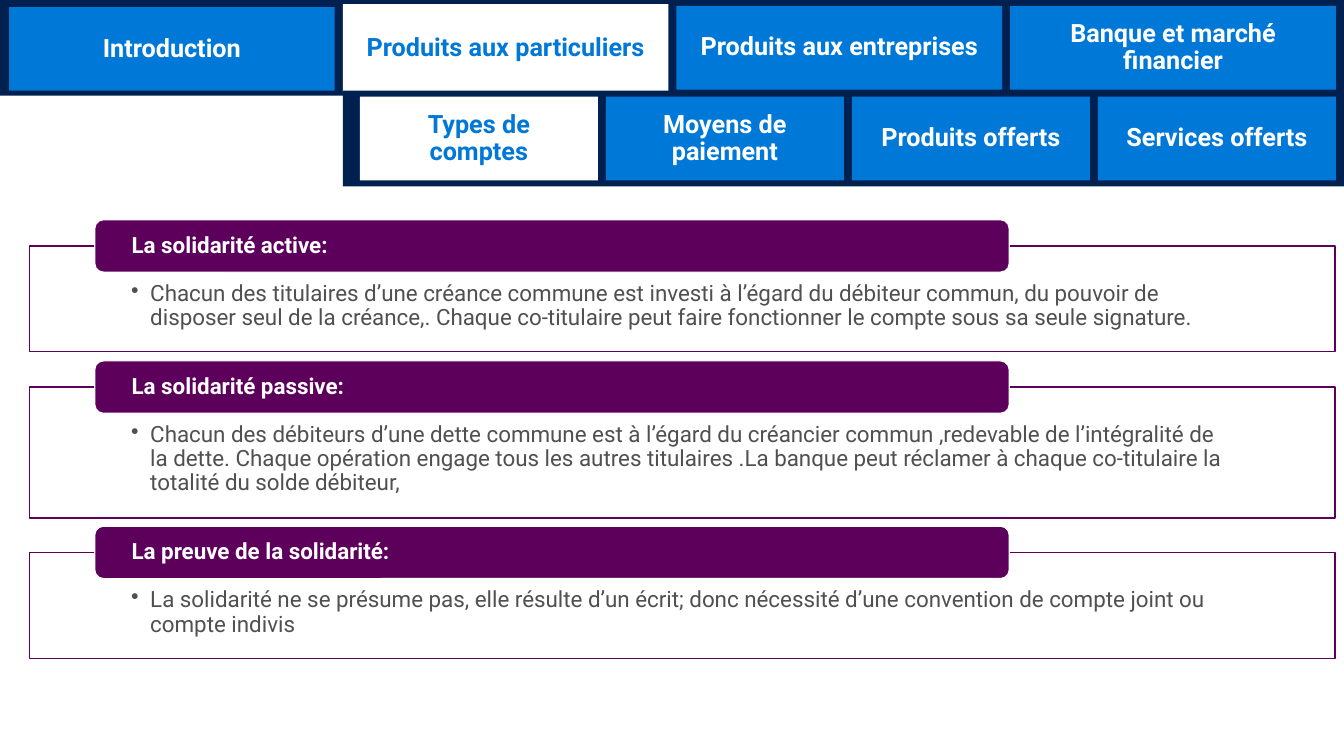
from lxml import etree
from pptx import Presentation
from pptx.dml.color import RGBColor
from pptx.enum.shapes import MSO_SHAPE
from pptx.enum.text import MSO_ANCHOR, PP_ALIGN
from pptx.oxml.ns import qn
from pptx.util import Inches, Pt

RECT, ROUNDED = MSO_SHAPE.RECTANGLE, MSO_SHAPE.ROUNDED_RECTANGLE
TOP, MIDDLE = MSO_ANCHOR.TOP, MSO_ANCHOR.MIDDLE
LEFT, CENTER = PP_ALIGN.LEFT, PP_ALIGN.CENTER

NAVY, BLUE, WHITE, PURPLE, GREY = "002050", "0078D7", "FFFFFF", "5C005C", "505050"
TAB_GAP = 0.08

# Label, top, height; the active tab is white
MAIN_TABS = [
    ("Introduction", 0.07, 0.83),
    ("Produits aux particuliers", 0.04, 0.87),
    ("Produits aux entreprises", 0.06, 0.83),
    ("Banque et marché financier", 0.06, 0.83),
]
SUB_TABS = [(label, 0.96, 0.83) for label in (
    "Types de comptes", "Moyens de paiement", "Produits offerts", "Services offerts")]

# Heading, body, panel top, panel height
SECTIONS = [
    ("La solidarité active:",
     "Chacun des titulaires d’une créance commune est investi à l’égard du débiteur "
     "commun, du pouvoir de disposer seul de la créance,. Chaque co-titulaire peut "
     "faire fonctionner le compte sous sa seule signature.", 2.44, 1.05),
    ("La solidarité passive:",
     "Chacun des débiteurs d’une dette commune est à l’égard du créancier commun "
     ",redevable de l’intégralité de la dette. Chaque opération engage tous les autres "
     "titulaires .La banque peut réclamer à chaque co-titulaire la totalité du solde "
     "débiteur,", 3.84, 1.3),
    ("La preuve de la solidarité:",
     "La solidarité ne se présume pas, elle résulte d’un écrit; donc nécessité d’une "
     "convention de compte joint ou compte indivis", 5.48, 1.05),
]


def rgb(color):
    return RGBColor.from_string(color)


def set_all(target, values):
    for name, value in values.items():
        setattr(target, name, value)


def add_box(slide, kind, box, fill, line=None):
    shape = slide.shapes.add_shape(kind, *map(Inches, box))
    shape.shadow.inherit = False
    shape.fill.solid()
    shape.fill.fore_color.rgb = rgb(fill)
    if line:
        shape.line.color.rgb = rgb(line)
        shape.line.width = Pt(0.85)
    else:
        shape.line.fill.background()
    return shape


def make_translucent(shape, percent):
    color = shape.fill._xPr.find(qn("a:solidFill"))[0]
    etree.SubElement(color, qn("a:alpha"), val=str(percent * 1000))


def add_bullet(paragraph, indent):
    properties = paragraph._p.get_or_add_pPr()
    properties.set("marL", str(Inches(indent)))
    properties.set("indent", str(-Inches(indent)))
    etree.SubElement(properties, qn("a:buChar"), char="•")


def write(shape, text, color, size, insets, anchor=MIDDLE, align=LEFT,
          bold=False, space_after=0, bullet_indent=None):
    """Fill the shape with one paragraph; insets are left/right and top, bottom."""
    side, top, bottom = map(Inches, insets)
    frame = shape.text_frame
    set_all(frame, {"word_wrap": True, "vertical_anchor": anchor,
                    "margin_left": side, "margin_right": side,
                    "margin_top": top, "margin_bottom": bottom})
    paragraph = frame.paragraphs[0]
    set_all(paragraph, {"alignment": align, "line_spacing": 0.9,
                        "space_after": Pt(space_after)})
    if bullet_indent:
        add_bullet(paragraph, bullet_indent)
    run = paragraph.add_run()
    run.text = text
    set_all(run.font, {"name": "Roboto", "size": Pt(size), "bold": bold})
    run.font.color.rgb = rgb(color)


def add_tabs(slide, tabs, left, width, active):
    for index, (label, top, height) in enumerate(tabs):
        fill, color = (WHITE, BLUE) if index == active else (BLUE, WHITE)
        box = (left + index * (width + TAB_GAP), top, width, height)
        tab = add_box(slide, RECT, box, fill)
        write(tab, label, color, 18, (0.2, 0.16, 0.16),
              align=CENTER, bold=True, space_after=6)


def add_section(slide, heading, body, top, height):
    panel = add_box(slide, RECT, (0.29, top, 12.95, height), WHITE, PURPLE)
    make_translucent(panel, 90)
    write(panel, body, GREY, 16, (1.01, 0.36, 0.12), anchor=TOP, bullet_indent=0.19)
    banner = add_box(slide, ROUNDED, (0.94, top - 0.26, 9.07, 0.52), PURPLE, WHITE)
    write(banner, heading, WHITE, 16, (0.34, 0, 0), bold=True)


def main():
    deck = Presentation()
    deck.slide_width, deck.slide_height = Inches(13.33), Inches(7.5)
    slide = deck.slides.add_slide(deck.slide_layouts[6])

    add_box(slide, RECT, (0, 0, 13.33, 0.95), NAVY)
    add_tabs(slide, MAIN_TABS, left=0.09, width=3.23, active=1)
    add_box(slide, RECT, (3.4, 0.9, 9.94, 0.95), NAVY)
    for section in SECTIONS:
        add_section(slide, *section)
    add_tabs(slide, SUB_TABS, left=3.57, width=2.36, active=0)

    deck.save("out.pptx")


if __name__ == "__main__":
    main()
